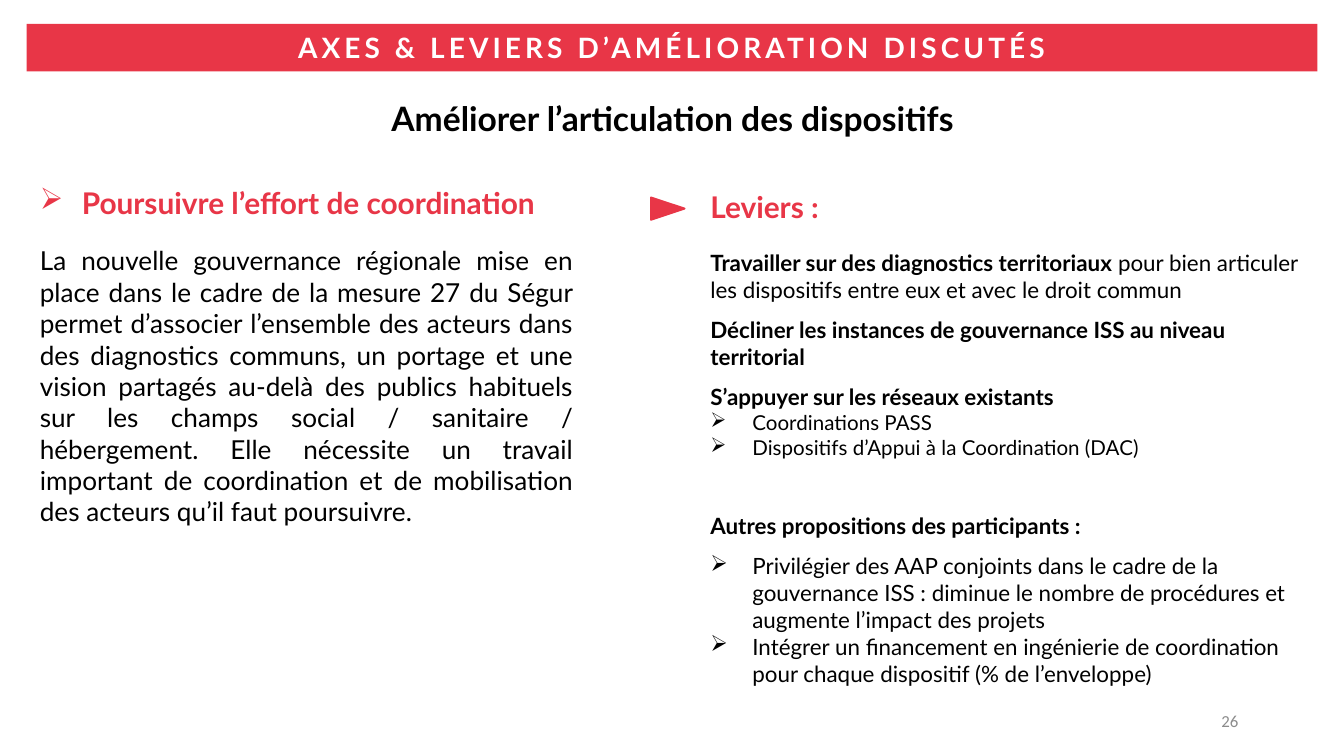
"""Builds the slide on improving how care schemes work together."""
from lxml import etree
from pptx import Presentation, util as u
from pptx.dml.color import RGBColor
from pptx.enum import shapes, text
from pptx.oxml.ns import qn

COLORS = {"accent": "E83647", "ink": "000000", "paper": "FFFFFF", "muted": "8C8C8C"}
EMU_PER_PX = 9525
BULLET_INDENT = 30
WIDE_GAP, NARROW_GAP = 13.2, 7.2


def px(length):
    return u.Emu(length * EMU_PER_PX)


def rgb(name):
    return RGBColor.from_string(COLORS[name])


def add_bullet(paragraph, color):
    properties = paragraph._p.get_or_add_pPr()
    properties.set("marL", str(px(BULLET_INDENT)))
    properties.set("indent", str(-px(BULLET_INDENT)))
    tint = etree.SubElement(properties, qn("a:buClr"))
    etree.SubElement(tint, qn("a:srgbClr"), val=COLORS[color])
    etree.SubElement(properties, qn("a:buChar"), char="➢")


def write(frame, wording, size=12, color="ink", bold=False, font="Lato", align="LEFT",
          before=0, bullet=False, spacing=None, joined=False):
    if joined:
        paragraph = frame.paragraphs[-1]
    else:
        paragraph = frame.add_paragraph() if frame.text else frame.paragraphs[0]
        paragraph.alignment = text.PP_ALIGN[align]
        paragraph.space_before = u.Pt(before)
        if bullet:
            add_bullet(paragraph, color)
    run = paragraph.add_run()
    run.text = wording
    run.font.size = u.Pt(size)
    run.font.name = font
    run.font.bold = bold
    run.font.color.rgb = rgb(color)
    if spacing:
        run._r.get_or_add_rPr().set("spc", str(spacing))


class Deck:
    def __init__(self, width, height):
        self.presentation = Presentation()
        self.presentation.slide_width = px(width)
        self.presentation.slide_height = px(height)
        self.slide = self.presentation.slides.add_slide(self.presentation.slide_layouts[6])

    def block(self, left, top, width, height, anchor="TOP"):
        box = self.slide.shapes.add_textbox(px(left), px(top), px(width), px(height))
        box.text_frame.word_wrap = True
        box.text_frame.vertical_anchor = text.MSO_ANCHOR[anchor]
        return box.text_frame

    def shape(self, preset, left, top, width, height, rotation=0, outline=None):
        figure = self.slide.shapes.add_shape(
            shapes.MSO_SHAPE[preset], px(left), px(top), px(width), px(height))
        figure.shadow.inherit = False
        figure.rotation = rotation
        figure.fill.solid()
        figure.fill.fore_color.rgb = rgb("accent")
        if outline:
            figure.line.color.rgb = rgb("accent")
            figure.line.width = u.Pt(outline)
        else:
            figure.line.fill.background()
        return figure.text_frame


def main():
    deck = Deck(960, 540)

    page_number = deck.block(678, 500, 216, 29, anchor="MIDDLE")
    write(page_number, "26", size=9, color="muted", font="Calibri", align="RIGHT")

    banner = deck.shape("RECTANGLE", 19, 17, 922, 34)
    write(banner, "AXES & LEVIERS D’AMÉLIORATION DISCUTÉS", size=15, color="paper",
          bold=True, align="CENTER", spacing=220)

    title = deck.block(27, 65, 907, 38)
    write(title, "Améliorer l’articulation des dispositifs", size=18, bold=True, align="CENTER")

    coordination = deck.block(19, 127, 400, 305)
    write(coordination, "Poursuivre l’effort de coordination", size=16, color="accent",
          bold=True, bullet=True)
    write(coordination,
          "La nouvelle gouvernance régionale mise en place dans le cadre de la mesure 27 du "
          "Ségur permet d’associer l’ensemble des acteurs dans des diagnostics communs, un "
          "portage et une vision partagés au-delà des publics habituels sur les champs social "
          "/ sanitaire / hébergement. Elle nécessite un travail important de coordination et "
          "de mobilisation des acteurs qu’il faut poursuivre.",
          size=14, align="JUSTIFY", before=WIDE_GAP)

    levers = deck.block(498, 130, 444, 253)
    write(levers, "Leviers :", size=16, color="accent", bold=True)
    write(levers, "Travailler sur des diagnostics territoriaux ", bold=True, before=WIDE_GAP)
    write(levers, "pour bien articuler les dispositifs entre eux et avec le droit commun",
          joined=True)
    for lever in ("Décliner les instances de gouvernance ISS au niveau territorial",
                  "S’appuyer sur les réseaux existants"):
        write(levers, lever, bold=True, before=NARROW_GAP)
    for network in ("Coordinations PASS", "Dispositifs d’Appui à la Coordination (DAC)"):
        write(levers, network, size=11, bullet=True)

    proposals = deck.block(498, 361, 444, 158)
    write(proposals, "Autres propositions des participants :", bold=True)
    write(proposals,
          "Privilégier des AAP conjoints dans le cadre de la gouvernance ISS : diminue le "
          "nombre de procédures et augmente l’impact des projets",
          before=NARROW_GAP, bullet=True)
    write(proposals,
          "Intégrer un financement en ingénierie de coordination pour chaque dispositif "
          "(% de l’enveloppe)", bullet=True)

    deck.shape("ISOSCELES_TRIANGLE", 469, 137, 16, 24, rotation=90, outline=1)
    deck.presentation.save("out.pptx")


if __name__ == "__main__":
    main()
